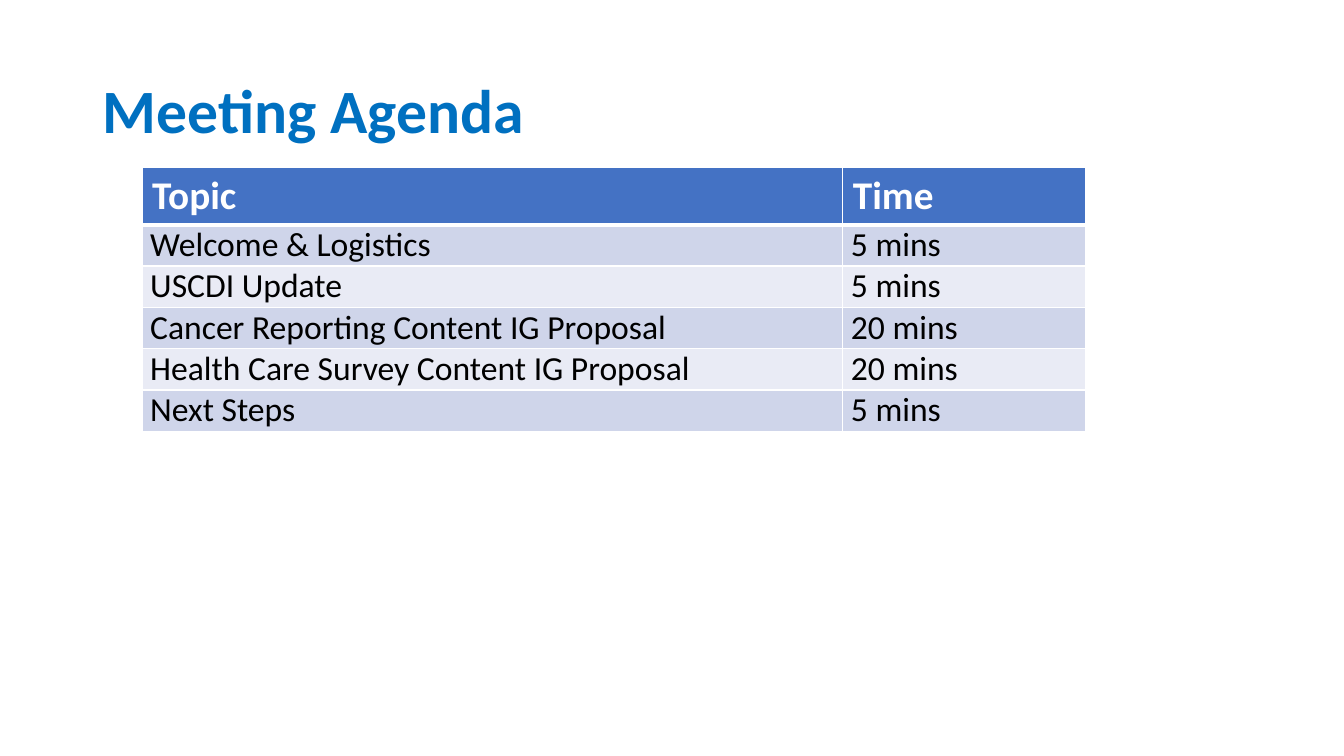
from pptx import Presentation, util as u
from pptx.dml.color import RGBColor
from pptx.enum import text
from pptx.oxml import parse_xml
from pptx.oxml.ns import nsdecls

WIDTH, HEIGHT = 13.33, 7.5
TITLE = "Meeting Agenda"
AGENDA = [
    ("Topic", "Time"),
    ("Welcome & Logistics", "5 mins"),
    ("USCDI Update", "5 mins"),
    ("Cancer Reporting Content IG Proposal", "20 mins"),
    ("Health Care Survey Content IG Proposal", "20 mins"),
    ("Next Steps", "5 mins"),
]
COLUMNS = (6.95, 2.41)
HEADER_HEIGHT, ROW_HEIGHT = 0.57, 0.41
TABLE_LEFT, TABLE_TOP = 1.41, 1.66
HEADER_FILL, BAND_FILLS = "4472C4", ("CFD5EA", "E9EBF5")
HEADER_STYLE = dict(size=28, color="FFFFFF", bold=True)
BODY_STYLE = dict(size=24, color="000000", space_after=6)


def rgb(value):
    return RGBColor.from_string(value)


def write(frame, content, size, color, bold=False, space_after=0, line_spacing=1.0):
    paragraph = frame.paragraphs[0]
    paragraph.space_after = u.Pt(space_after)
    paragraph.line_spacing = line_spacing
    run = paragraph.add_run()
    run.text = content
    run.font.name = "Calibri"
    run.font.size = u.Pt(size)
    run.font.bold = bold
    run.font.color.rgb = rgb(color)


def set_borders(cell, bottom):
    properties = cell._tc.get_or_add_tcPr()
    for index, (side, points) in enumerate(zip("LRTB", (1, 1, 1, bottom))):
        properties.insert(index, parse_xml(
            f'<a:ln{side} {nsdecls("a")} w="{u.Pt(points)}"><a:solidFill>'
            f'<a:srgbClr val="FFFFFF"/></a:solidFill></a:ln{side}>'))


def add_title(slide):
    box = slide.shapes.add_textbox(
        u.Inches(0.92), u.Inches(0.4), u.Inches(11.5), u.Inches(1.45))
    frame = box.text_frame
    frame.word_wrap = True
    frame.vertical_anchor = text.MSO_ANCHOR.MIDDLE
    write(frame, TITLE, size=44, color="0070C0", bold=True, line_spacing=0.9)


def add_agenda(slide):
    heights = [HEADER_HEIGHT] + [ROW_HEIGHT] * (len(AGENDA) - 1)
    table = slide.shapes.add_table(
        len(AGENDA), len(COLUMNS), u.Inches(TABLE_LEFT), u.Inches(TABLE_TOP),
        u.Inches(sum(COLUMNS)), u.Inches(sum(heights))).table
    for column, width in zip(table.columns, COLUMNS):
        column.width = u.Inches(width)
    for index, (row, height, entries) in enumerate(zip(table.rows, heights, AGENDA)):
        row.height = u.Inches(height)
        header = index == 0
        for cell, entry in zip(row.cells, entries):
            cell.fill.solid()
            cell.fill.fore_color.rgb = rgb(
                HEADER_FILL if header else BAND_FILLS[(index - 1) % 2])
            if not header:
                cell.margin_left = cell.margin_right = u.Inches(0.08)
                cell.margin_top = cell.margin_bottom = 0
            set_borders(cell, bottom=3 if header else 1)
            write(cell.text_frame, entry, **(HEADER_STYLE if header else BODY_STYLE))


def main():
    presentation = Presentation()
    presentation.slide_width = u.Inches(WIDTH)
    presentation.slide_height = u.Inches(HEIGHT)
    slide = presentation.slides.add_slide(presentation.slide_layouts[6])
    add_title(slide)
    add_agenda(slide)
    presentation.save("out.pptx")


if __name__ == "__main__":
    main()
